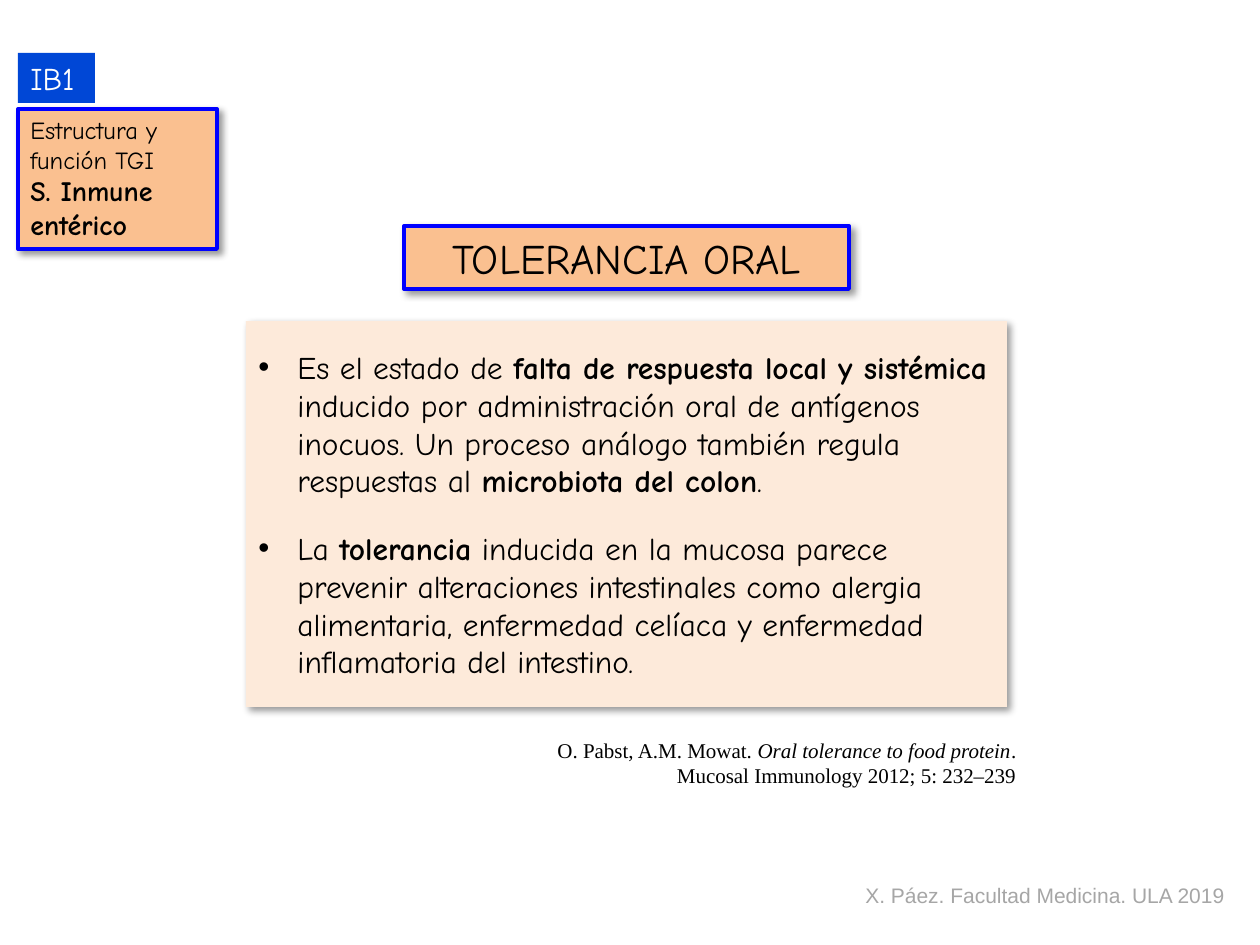
from dataclasses import dataclass

from lxml.etree import SubElement
from pptx import Presentation
from pptx.dml.color import RGBColor
from pptx.enum.shapes import MSO_SHAPE
from pptx.enum.text import MSO_ANCHOR, PP_ALIGN
from pptx.oxml.ns import qn
from pptx.util import Emu, Pt

PX = 914400 / 126


@dataclass(frozen=True)
class Theme:
    """Colours, fonts and type sizes of the slide."""
    ink: str = "000000"
    white: str = "FFFFFF"
    grey: str = "A6A6A6"
    blue: str = "0047D6"
    border: str = "0000FF"
    peach: str = "FAC090"
    cream: str = "FDEADA"
    hand: str = "Comic Neue"
    serif: str = "Times New Roman"
    sans: str = "Arial"
    title: int = 24
    body: int = 18
    topic: int = 16
    label: int = 14
    small: int = 12


THEME = Theme()


def px(value):
    """Turn pixels into EMU."""
    return Emu(round(value * PX))


def add_shadow(shape):
    """Give a shape a soft shadow to the lower right."""
    effects = shape._element.spPr.find(qn("a:effectLst"))
    shadow = SubElement(effects, qn("a:outerShdw"), blurRad=str(Pt(4)), dist=str(Pt(3)),
                        dir="2700000", algn="tl", rotWithShape="0")
    color = SubElement(shadow, qn("a:srgbClr"), val=THEME.ink)
    SubElement(color, qn("a:alpha"), val="40000")


def add_panel(page, place, fill, border=None, shadow=True):
    """Add a filled rectangle and return it."""
    panel = page.shapes.add_shape(MSO_SHAPE.RECTANGLE, *map(px, place))
    panel.shadow.inherit = False
    panel.fill.solid()
    panel.fill.fore_color.rgb = RGBColor.from_string(fill)
    if border:
        panel.line.color.rgb = RGBColor.from_string(border)
        panel.line.width = Pt(2.25)
    else:
        panel.line.fill.background()
    if shadow:
        add_shadow(panel)
    return panel


def set_bullet(para, indent=39):
    """Give a paragraph a round bullet and a hanging indent."""
    properties = para._p.get_or_add_pPr()
    properties.set("marL", str(px(indent)))
    properties.set("indent", str(-px(indent)))
    SubElement(properties, qn("a:buFont"), typeface=THEME.sans)
    SubElement(properties, qn("a:buChar"), char="•")


def add_span(para, text, size=THEME.body, font=THEME.hand, color=THEME.ink, bold=False, italic=False):
    """Add formatted text to a paragraph."""
    span = para.add_run()
    span.text = text
    span.font.size = Pt(size)
    span.font.name = font
    span.font.color.rgb = RGBColor.from_string(color)
    span.font.bold = bold
    span.font.italic = italic


def write(box, paragraphs, align=PP_ALIGN.LEFT, wrap=True, anchor=MSO_ANCHOR.TOP, gap=0,
          bullet=False, **style):
    """Fill a box with paragraphs, each a list of (text, format) pairs."""
    frame = box.text_frame
    frame.word_wrap = wrap
    frame.vertical_anchor = anchor
    for index, spans in enumerate(paragraphs):
        para = frame.add_paragraph() if index else frame.paragraphs[0]
        para.alignment = align
        if index and gap:
            para.space_before = Pt(gap)
        if bullet:
            set_bullet(para)
        for text, extra in spans:
            add_span(para, text, **{**style, **extra})


def main():
    """Build the slide and save it."""
    deck = Presentation()
    deck.slide_width, deck.slide_height = px(1260), px(945)
    page = deck.slides.add_slide(deck.slide_layouts[6])
    bold = {"bold": True}

    definition = add_panel(page, (246, 321, 761, 386), THEME.cream)
    write(definition, [
        [("Es el estado de ", {}),
         ("falta de respuesta local y sistémica ", bold),
         ("inducido por administración oral de antígenos inocuos. "
          "Un proceso análogo también regula respuestas al ", {}),
         ("microbiota del colon", bold), (".", {})],
        [("La ", {}), ("tolerancia", bold),
         (" inducida en la mucosa parece prevenir alteraciones intestinales como alergia "
          "alimentaria, enfermedad celíaca y enfermedad inflamatoria del intestino.", {})],
    ], anchor=MSO_ANCHOR.MIDDLE, gap=17, bullet=True)

    citation = page.shapes.add_textbox(*map(px, (481, 731, 553, 63)))
    write(citation, [
        [("O. Pabst, A.M. Mowat. ", {}),
         ("Oral tolerance to food protein", {"italic": True}), (". ", {})],
        [("Mucosal Immunology 2012; 5: 232–239 ", {})],
    ], align=PP_ALIGN.RIGHT, size=THEME.small, font=THEME.serif)

    title = add_panel(page, (404, 226, 445, 63), THEME.peach, THEME.border)
    write(title, [[("TOLERANCIA ORAL", {})]], align=PP_ALIGN.CENTER, wrap=False, size=THEME.title)

    credit = page.shapes.add_textbox(*map(px, (853, 876, 388, 38)))
    write(credit, [[("X. Páez. Facultad Medicina. ULA 2019", {})]], wrap=False,
          size=THEME.small, font=THEME.sans, color=THEME.grey)

    code = add_panel(page, (18, 53, 77, 50), THEME.blue, shadow=False)
    write(code, [[("IB1", {})]], wrap=False, color=THEME.white)

    topic = add_panel(page, (18, 109, 199, 140), THEME.peach, THEME.border)
    write(topic, [
        [("Estructura y función TGI", {})],
        [("S. Inmune entérico", {"size": THEME.topic, "bold": True})],
    ], size=THEME.label)

    deck.save("out.pptx")


if __name__ == "__main__":
    main()
